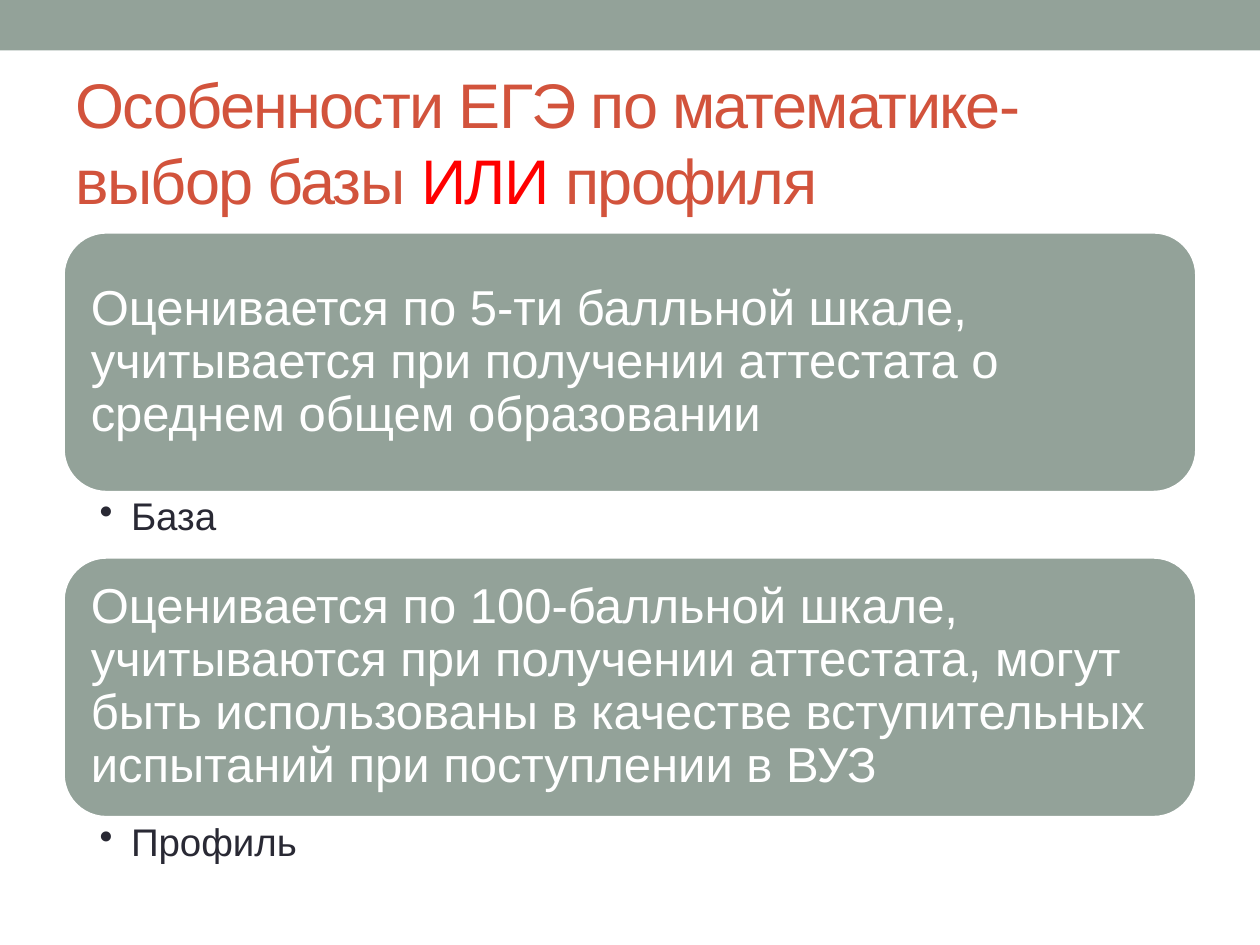
from pptx import Presentation
from pptx.dml.color import RGBColor
from pptx.enum.shapes import MSO_SHAPE
from pptx.enum.text import MSO_ANCHOR, MSO_AUTO_SIZE, PP_ALIGN
from pptx.oxml.ns import qn
from pptx.util import Inches, Pt

RECTANGLE, ROUNDED = MSO_SHAPE.RECTANGLE, MSO_SHAPE.ROUNDED_RECTANGLE
TOP, MIDDLE = MSO_ANCHOR.TOP, MSO_ANCHOR.MIDDLE
LEFT = PP_ALIGN.LEFT
NO_AUTOFIT = MSO_AUTO_SIZE.NONE

SAGE = RGBColor(0x93, 0xA2, 0x99)
BRICK = RGBColor(0xD2, 0x53, 0x3C)
RED = RGBColor(0xFF, 0x00, 0x00)
INK = RGBColor(0x29, 0x29, 0x34)
WHITE = RGBColor(0xFF, 0xFF, 0xFF)

TITLE = [
    ("Особенности ЕГЭ по математике- выбор базы ", BRICK),
    ("ИЛИ", RED),
    (" профиля", BRICK),
]
LEVELS = [
    ("Оценивается по 5-ти балльной шкале, учитывается при получении "
     "аттестата о среднем общем образовании", "База"),
    ("Оценивается по 100-балльной шкале, учитываются при получении "
     "аттестата, могут быть использованы в качестве вступительных "
     "испытаний при поступлении в ВУЗ", "Профиль"),
]
MARGIN, WIDTH = 0.5, 9
FIRST_TOP, PANEL_HEIGHT, LABEL_HEIGHT = 1.84, 2.07, 0.51


def set_values(target, values):
    for name, value in values.items():
        setattr(target, name, value)


def set_frame(frame, anchor, left, top, right, bottom):
    set_values(frame, {
        "word_wrap": True, "auto_size": NO_AUTOFIT, "vertical_anchor": anchor,
        "margin_left": Inches(left), "margin_top": Inches(top),
        "margin_right": Inches(right), "margin_bottom": Inches(bottom),
    })


def add_span(para, text, size, color):
    span = para.add_run()
    span.text = text
    set_values(span.font, {"name": "Arial", "size": Pt(size)})
    span.font.color.rgb = color
    return span


def add_block(page, kind, left, top, width, height):
    block = page.shapes.add_shape(
        kind, Inches(left), Inches(top), Inches(width), Inches(height))
    block.shadow.inherit = False
    block.fill.solid()
    block.fill.fore_color.rgb = SAGE
    block.line.fill.background()
    return block


def fill_title(page):
    title = page.shapes.title
    set_values(title, {"left": Inches(MARGIN), "top": Inches(0.58),
                       "width": Inches(WIDTH), "height": Inches(1.08)})
    set_frame(title.text_frame, MIDDLE, 0.1, 0.05, 0.1, 0.05)
    para = title.text_frame.paragraphs[0]
    para.alignment = LEFT
    for text, color in TITLE:
        span = add_span(para, text, 36, color)
        span.font._element.set("spc", "-100")


def add_panel(page, top, text):
    panel = add_block(page, ROUNDED, MARGIN, top, WIDTH, PANEL_HEIGHT)
    panel.line.color.rgb = WHITE
    panel.line.width = Pt(2.08)
    set_frame(panel.text_frame, MIDDLE, 0.12, 0.12, 0.12, 0.12)
    para = panel.text_frame.paragraphs[0]
    set_values(para, {"alignment": LEFT, "line_spacing": 0.9})
    add_span(para, text, 28, WHITE)


def add_label(page, top, text):
    box = page.shapes.add_textbox(
        Inches(MARGIN), Inches(top), Inches(WIDTH), Inches(LABEL_HEIGHT))
    set_frame(box.text_frame, TOP, 0.29, 0.04, 0.22, 0.04)
    para = box.text_frame.paragraphs[0]
    set_values(para, {"alignment": LEFT, "line_spacing": 0.9})
    add_span(para, text, 22, INK)
    # Hanging bullet
    properties = para._p.get_or_add_pPr()
    properties.set("marL", str(Inches(0.25)))
    properties.set("indent", str(Inches(-0.25)))
    bullet = properties.makeelement(qn("a:buChar"), {"char": "•"})
    properties.append(bullet)


def main():
    deck = Presentation()
    deck.slide_width, deck.slide_height = Inches(10), Inches(7.5)
    page = deck.slides.add_slide(deck.slide_layouts[5])

    # Top band and title
    add_block(page, RECTANGLE, 0, 0, 10, 0.4)
    fill_title(page)

    # Exam levels: a description panel with its label below
    for index, (description, label) in enumerate(LEVELS):
        top = FIRST_TOP + index * (PANEL_HEIGHT + LABEL_HEIGHT)
        add_panel(page, top, description)
        add_label(page, top + PANEL_HEIGHT, label)

    deck.save("out.pptx")


if __name__ == "__main__":
    main()
